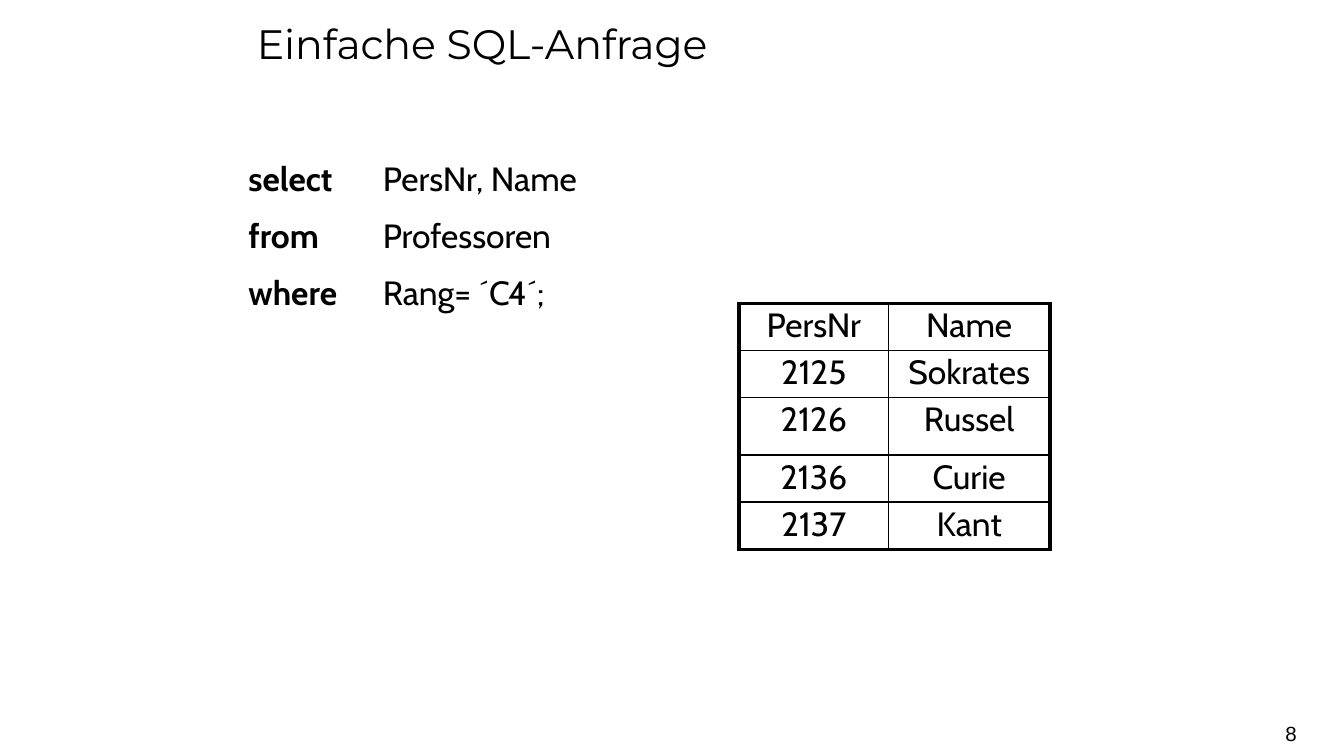
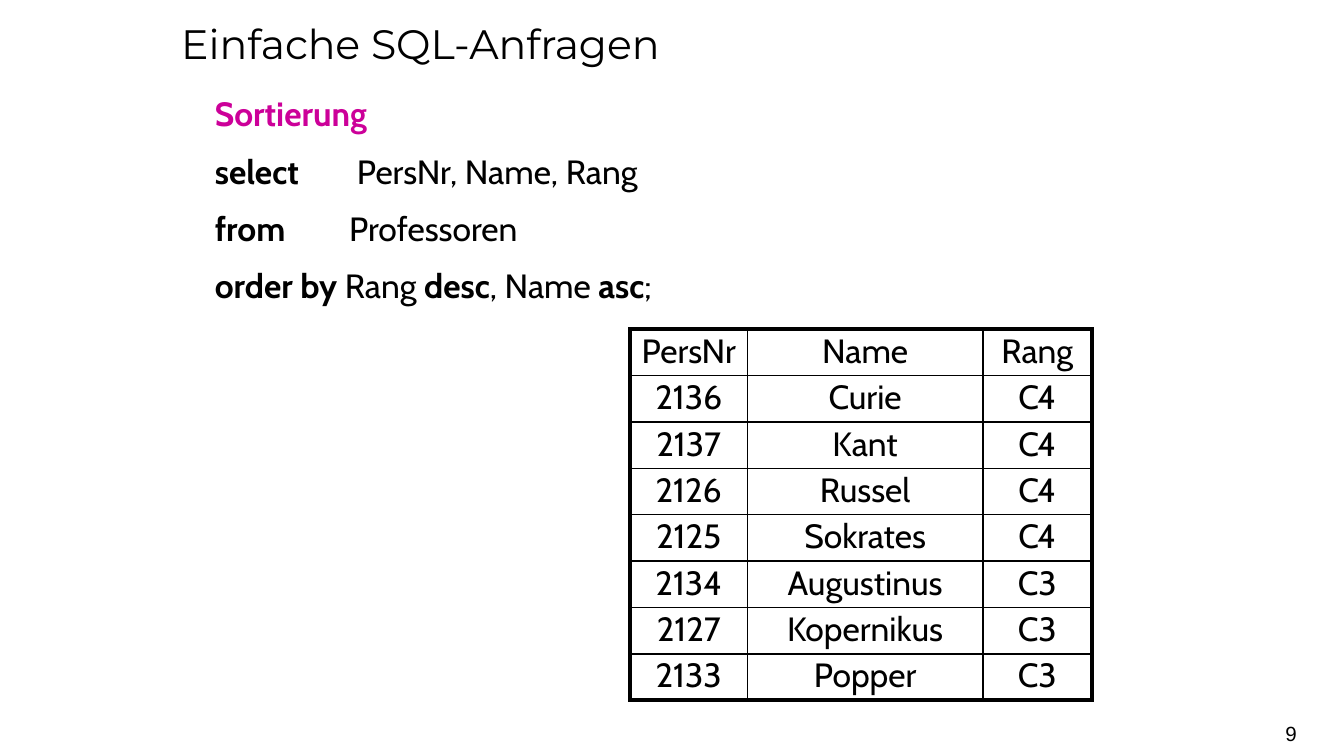
from dataclasses import dataclass

from lxml.etree import SubElement
from pptx import Presentation
from pptx.dml.color import RGBColor
from pptx.enum.text import MSO_ANCHOR, MSO_AUTO_SIZE, PP_ALIGN
from pptx.oxml.ns import qn
from pptx.util import Pt


@dataclass(frozen=True)
class Theme:
    """Colours, fonts, sizes and line widths of the deck."""
    ink: RGBColor = RGBColor(0, 0, 0)
    accent: RGBColor = RGBColor(0xCC, 0, 0x99)
    title_font: str = "Montserrat"
    body_font: str = "Cabin"
    number_font: str = "Arial"
    title_size: float = 22
    body_size: float = 18
    number_size: float = 11
    frame_line: float = 2.25
    grid_line: float = 1


@dataclass(frozen=True)
class Box:
    """A rectangle in points."""
    left: float
    top: float
    width: float
    height: float

    def lengths(self):
        """Return the four sides as lengths for a new shape."""
        return [Pt(side) for side in (self.left, self.top, self.width, self.height)]


THEME = Theme()
PAGE = Box(0, 0, 720, 405)
NUMBER_BOX = Box(533.5, 382.3, 161.3, 21.6)
TAB_STOP = 72

TITLE = {"name": THEME.title_font, "size": Pt(THEME.title_size)}
PLAIN = {"name": THEME.body_font, "size": Pt(THEME.body_size), "bold": False}
KEYWORD = PLAIN | {"bold": True}
HEADING = KEYWORD | {"color": THEME.accent}
NUMBER = {"name": THEME.number_font, "size": Pt(THEME.number_size)}

CELL_MARGINS = {"margin_left": 0, "margin_right": 0,
                "margin_top": Pt(2.55), "margin_bottom": Pt(2.55)}
CELL_PARAGRAPH = {"alignment": PP_ALIGN.CENTER, "line_spacing": 0.9}


def apply_format(target, values):
    """Set each attribute named in values on the target."""
    for name, value in values.items():
        setattr(target, name, value)


def add_run(paragraph, text, style):
    """Append a run of text in the given font style."""
    run = paragraph.add_run()
    run.text = text
    values = {"color": THEME.ink} | style
    run.font.color.rgb = values.pop("color")
    apply_format(run.font, values)


def add_text_frame(slide, box, **frame_format):
    """Add a wrapping text box and return its text frame."""
    frame = slide.shapes.add_textbox(*box.lengths()).text_frame
    apply_format(frame, {"word_wrap": True} | frame_format)
    return frame


def add_title(slide, box, text):
    """Write the slide title at the top of its box."""
    paragraph = add_text_frame(slide, box).paragraphs[0]
    paragraph.line_spacing = 1.25
    add_run(paragraph, text, TITLE)


def add_slide_number(slide, box, number):
    """Write the slide number flush right in its box."""
    frame = add_text_frame(slide, box, margin_left=0, margin_right=0,
                           vertical_anchor=MSO_ANCHOR.MIDDLE)
    paragraph = frame.paragraphs[0]
    paragraph.alignment = PP_ALIGN.RIGHT
    add_run(paragraph, str(number), NUMBER)


def add_query(slide, box, lines):
    """Write an SQL query, one paragraph per clause, with a tab stop after the keyword."""
    frame = add_text_frame(slide, box, auto_size=MSO_AUTO_SIZE.SHAPE_TO_FIT_TEXT)
    for index, line in enumerate(lines):
        paragraph = frame.add_paragraph() if index else frame.paragraphs[0]
        tabs = SubElement(paragraph._p.get_or_add_pPr(), qn("a:tabLst"))
        SubElement(tabs, qn("a:tab"), pos=str(Pt(TAB_STOP)), algn="l")
        if index:
            paragraph.space_before = Pt(THEME.body_size / 2)
        for text, style in line:
            add_run(paragraph, text, style)


def set_borders(cell, on_frame):
    """Draw the cell borders, heavier on the sides that lie on the table frame."""
    properties = cell._tc.get_or_add_tcPr()
    for side in "LRTB":
        width = THEME.frame_line if on_frame[side] else THEME.grid_line
        line = SubElement(properties, qn(f"a:ln{side}"), w=str(Pt(width)))
        fill = SubElement(line, qn("a:solidFill"))
        SubElement(fill, qn("a:srgbClr"), val=str(THEME.ink))


def add_result_table(slide, box, column_widths, row_heights, records):
    """Add a framed table of query results, filling the box."""
    last_row, last_column = len(records) - 1, len(column_widths) - 1
    table = slide.shapes.add_table(len(records), len(column_widths), *box.lengths()).table
    apply_format(table, {"first_row": False, "horz_banding": False})
    for column, width in zip(table.columns, column_widths):
        column.width = Pt(width)
    for row_index, (record, height) in enumerate(zip(records, row_heights)):
        table.rows[row_index].height = Pt(height)
        for column_index, text in enumerate(record):
            cell = table.cell(row_index, column_index)
            apply_format(cell, CELL_MARGINS)
            set_borders(cell, {"L": column_index == 0, "R": column_index == last_column,
                               "T": row_index == 0, "B": row_index == last_row})
            cell.fill.background()
            paragraph = cell.text_frame.paragraphs[0]
            apply_format(paragraph, CELL_PARAGRAPH)
            add_run(paragraph, text, PLAIN)


def add_base_slide(presentation, title_box, title, number):
    """Add a blank slide with its title and number."""
    slide = presentation.slides.add_slide(presentation.slide_layouts[6])
    add_title(slide, title_box, title)
    add_slide_number(slide, NUMBER_BOX, number)
    return slide


def build_selection_slide(presentation):
    """Build the slide on a query with a condition."""
    slide = add_base_slide(presentation, Box(130.5, 0, 459, 54), "Einfache SQL-Anfrage", 8)
    add_query(slide, Box(126, 81, 274.5, 94.5), [
        [("select\t", KEYWORD), ("PersNr, Name", PLAIN)],
        [("from\t", KEYWORD), ("Professoren", PLAIN)],
        [("where", KEYWORD), ("\tRang= ´C4´;", PLAIN)],
    ])
    records = [("PersNr", "Name"), ("2125", "Sokrates"), ("2126", "Russel"),
               ("2136", "Curie"), ("2137", "Kant")]
    add_result_table(slide, Box(396, 162.5, 166.4, 131.8), [80, 86.4],
                     [25.2, 25.2, 31, 25.2, 25.2], records)


def build_sorting_slide(presentation):
    """Build the slide on a sorted query."""
    slide = add_base_slide(presentation, Box(90, 0, 540, 49.5), "Einfache SQL-Anfragen", 9)
    add_query(slide, Box(108, 46.5, 319.5, 127.5), [
        [("Sortierung", HEADING)],
        [("select\t ", KEYWORD), ("PersNr, Name, Rang", PLAIN)],
        [("from\t", KEYWORD), ("Professoren", PLAIN)],
        [("order by", KEYWORD), (" Rang ", PLAIN), ("desc", KEYWORD),
         (", Name ", PLAIN), ("asc", KEYWORD), (";", PLAIN)],
    ])
    records = [("PersNr", "Name", "Rang"), ("2136", "Curie", "C4"), ("2137", "Kant", "C4"),
               ("2126", "Russel", "C4"), ("2125", "Sokrates", "C4"),
               ("2134", "Augustinus", "C3"), ("2127", "Kopernikus", "C3"),
               ("2133", "Popper", "C3")]
    box = Box(337.5, 176.4, 247.5, 198.8)
    add_result_table(slide, box, [63, 126, 58.5],
                     [box.height / len(records)] * len(records), records)


def main():
    """Build and save the presentation."""
    presentation = Presentation()
    apply_format(presentation, {"slide_width": Pt(PAGE.width), "slide_height": Pt(PAGE.height)})
    build_selection_slide(presentation)
    build_sorting_slide(presentation)
    presentation.save("out.pptx")


if __name__ == "__main__":
    main()
